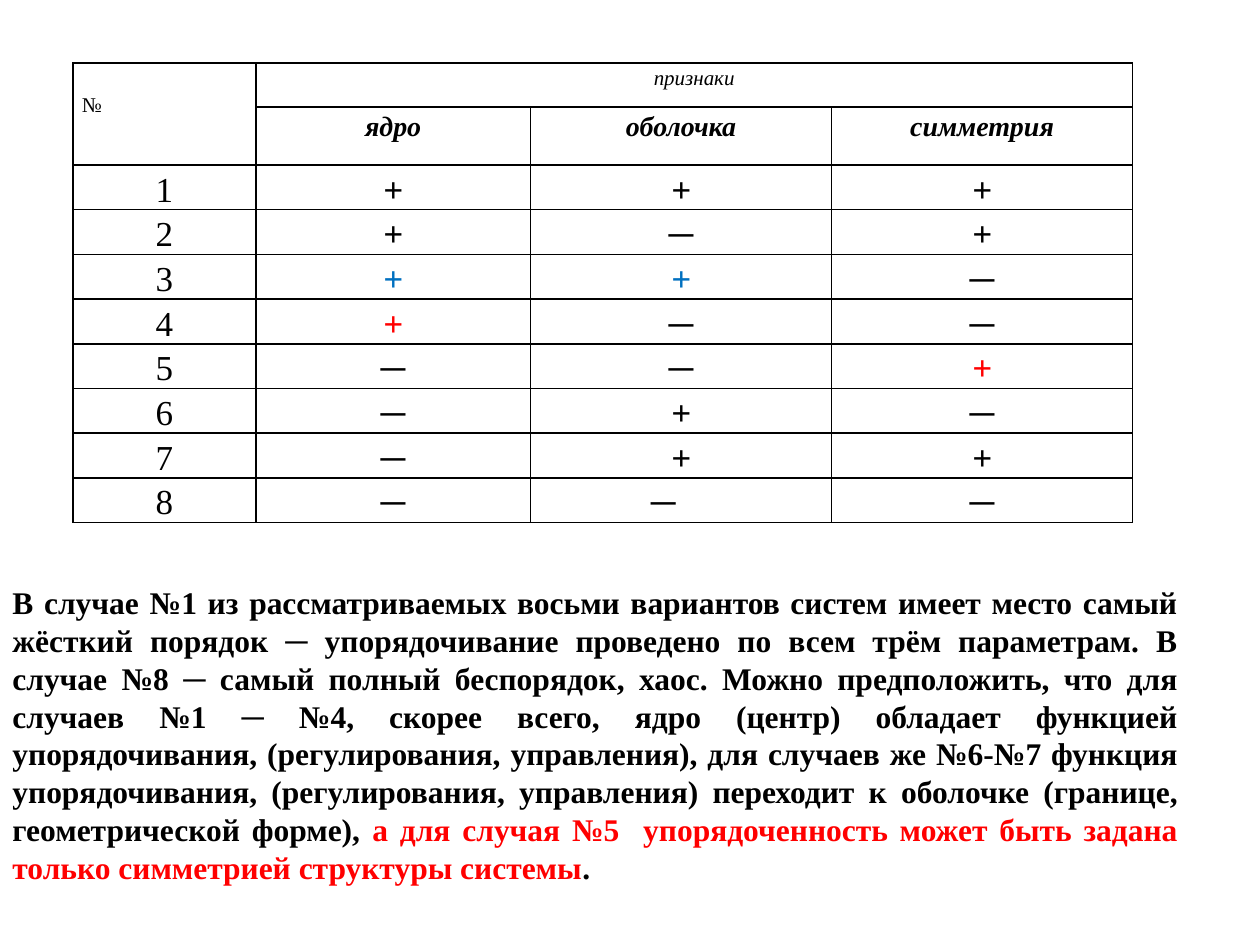
from dataclasses import dataclass

from pptx import Presentation
from pptx.dml.color import RGBColor
from pptx.enum.text import MSO_AUTO_SIZE as AutoSize, PP_ALIGN as Align
from pptx.oxml import parse_xml
from pptx.oxml.ns import nsdecls
from pptx.util import Inches, Pt


@dataclass(frozen=True)
class Theme:
    font: str = "Times New Roman"
    black: str = "000000"
    blue: str = "0070C0"
    red: str = "FF0000"
    label: int = 12
    heading: int = 16
    mark: int = 20
    body: int = 18
    border: int = 1
    leading: float = 1.15


class SlideBuilder:
    """Adds themed elements to one slide, placed by shares of its size."""

    def __init__(self, prs, theme):
        self.theme = theme
        self.width, self.height = prs.slide_width, prs.slide_height
        self.s = prs.slides.add_slide(prs.slide_layouts[6])

    def box(self, x, y, w, h):
        return (int(x * self.width), int(y * self.height),
                int(w * self.width), int(h * self.height))

    def run(self, p, text, size, color=None, bold=False, italic=False):
        r = p.add_run()
        r.text = text
        font = r.font
        font.name, font.size = self.theme.font, Pt(size)
        font.bold, font.italic = bold, italic
        font.color.rgb = RGBColor.from_string(color or self.theme.black)

    def table(self, x, y, columns, rows):
        frame = self.s.shapes.add_table(
            len(rows), len(columns), *self.box(x, y, sum(columns), sum(rows)))
        table = frame.table
        for column, share in zip(table.columns, columns):
            column.width = int(share * self.width)
        for row, share in zip(table.rows, rows):
            row.height = int(share * self.height)
        for cell in table.iter_cells():
            self.frame_cell(cell)
        return table

    def frame_cell(self, cell):
        cell.margin_left = cell.margin_right = Inches(0.07)
        cell.margin_top = cell.margin_bottom = 0
        tcPr = cell._tc.get_or_add_tcPr()
        for side in "LRTB":
            tcPr.append(parse_xml(
                f'<a:ln{side} {nsdecls("a")} w="{Pt(self.theme.border)}"><a:solidFill>'
                f'<a:srgbClr val="{self.theme.black}"/></a:solidFill></a:ln{side}>'))
        cell.fill.background()

    def cell(self, cell, text, size, align=Align.CENTER, **style):
        p = cell.text_frame.paragraphs[0]
        p.alignment, p.line_spacing = align, self.theme.leading
        self.run(p, text, size, **style)

    def paragraph(self, x, y, w, h, runs):
        sp = self.s.shapes.add_textbox(*self.box(x, y, w, h))
        tf = sp.text_frame
        tf.word_wrap, tf.auto_size = True, AutoSize.SHAPE_TO_FIT_TEXT
        p = tf.paragraphs[0]
        p.alignment = Align.JUSTIFY
        for text, color in runs:
            self.run(p, text, self.theme.body, color, bold=True)


HEADINGS = ("ядро", "оболочка", "симметрия")
MARKS = ("+++", "+─+", "++─", "+──", "──+", "─+─", "─++", "───")


def main():
    prs = Presentation()
    prs.slide_width, prs.slide_height = Inches(10), Inches(7.5)
    theme = Theme()
    slide = SlideBuilder(prs, theme)

    columns = [0.145, 0.218, 0.239, 0.239]
    rows = [0.35 / 7.5, 0.46 / 7.5] + [0.35 / 7.5] * len(MARKS)
    table = slide.table(0.058, 0.5 / 7.5, columns, rows)
    number = table.cell(0, 0)
    number.merge(table.cell(1, 0))
    number.margin_top = Inches(0.22)
    slide.cell(number, "№", theme.label, Align.LEFT)
    features = table.cell(0, 1)
    features.merge(table.cell(0, 3))
    slide.cell(features, "признаки", theme.label, italic=True)
    for col, heading in enumerate(HEADINGS, 1):
        slide.cell(table.cell(1, col), heading, theme.heading, bold=True, italic=True)

    accents = {(3, 1): theme.blue, (3, 2): theme.blue,
               (4, 1): theme.red, (5, 3): theme.red}
    for case, marks in enumerate(MARKS, 1):
        slide.cell(table.cell(case + 1, 0), str(case), theme.mark)
        for col, mark in enumerate(marks, 1):
            slide.cell(table.cell(case + 1, col), mark, theme.mark,
                       color=accents.get((case, col)), bold=True, italic=True)
    table.cell(9, 2).margin_right = Inches(0.35)

    slide.paragraph(0, 4.58 / 7.5, 0.945, 2.52 / 7.5, [
        ("В случае №1 из рассматриваемых восьми вариантов систем имеет место "
         "самый жёсткий порядок ─ упорядочивание проведено по всем трём "
         "параметрам. В случае №8 ─ самый полный беспорядок, хаос. Можно "
         "предположить, что для случаев №1 ─ №4, скорее всего, ядро (центр) "
         "обладает функцией упорядочивания, (регулирования, управления), для "
         "случаев же №6-№7 функция упорядочивания, (регулирования, управления) "
         "переходит к оболочке (границе, геометрической форме), ", theme.black),
        ("а для случая №5  упорядоченность может быть задана только "
         "симметрией структуры системы", theme.red),
        (".", theme.black),
    ])
    prs.save("out.pptx")


if __name__ == "__main__":
    main()
